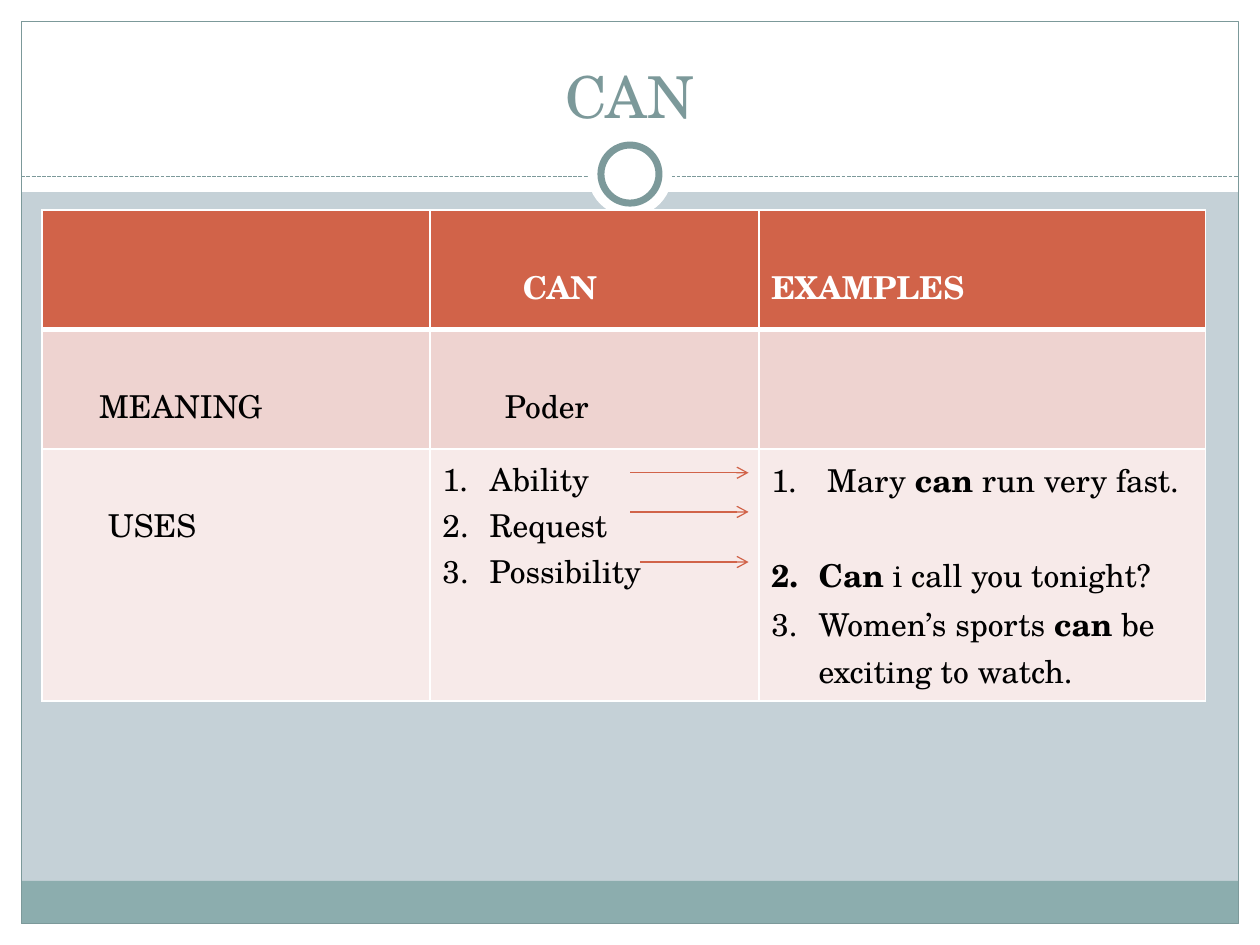
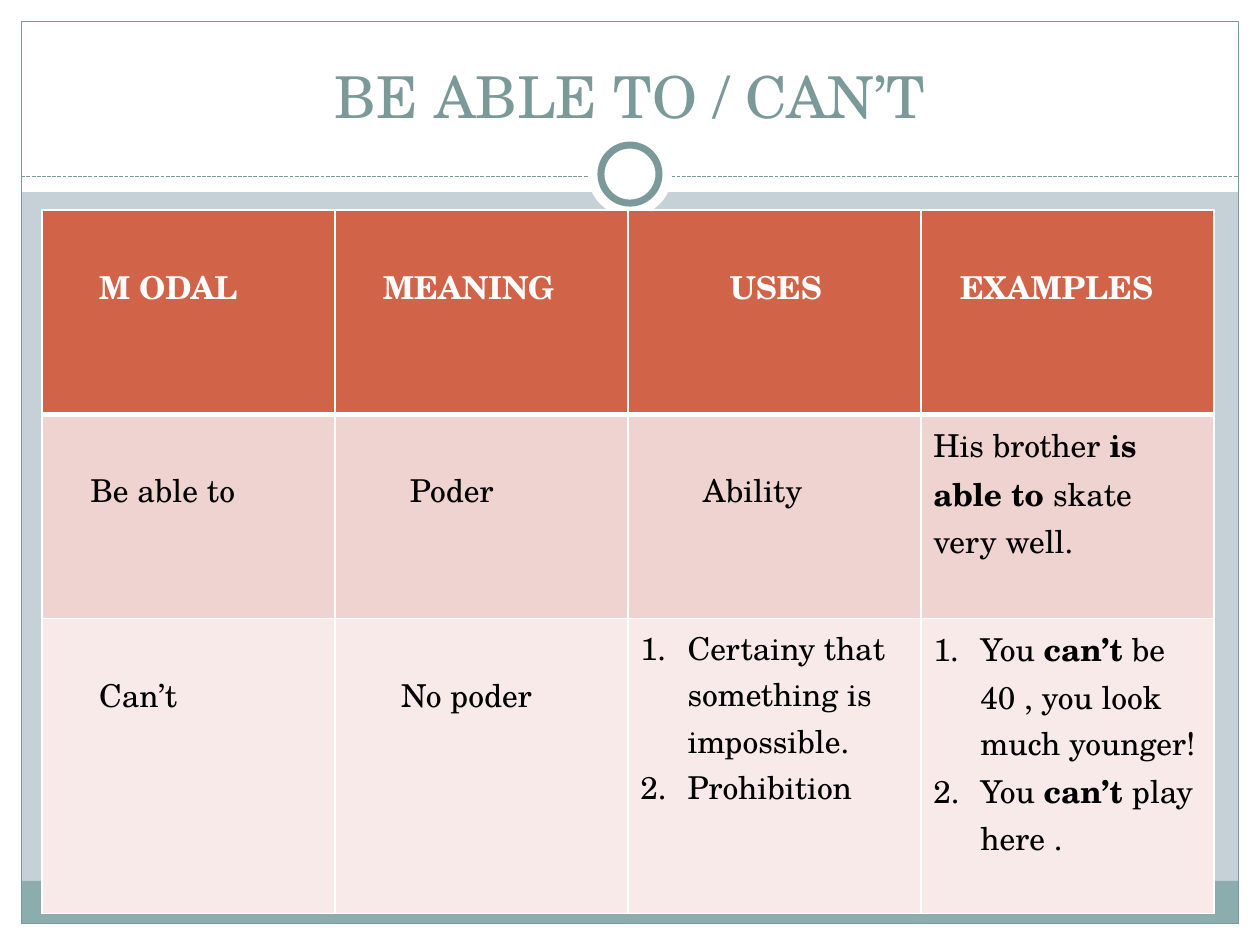
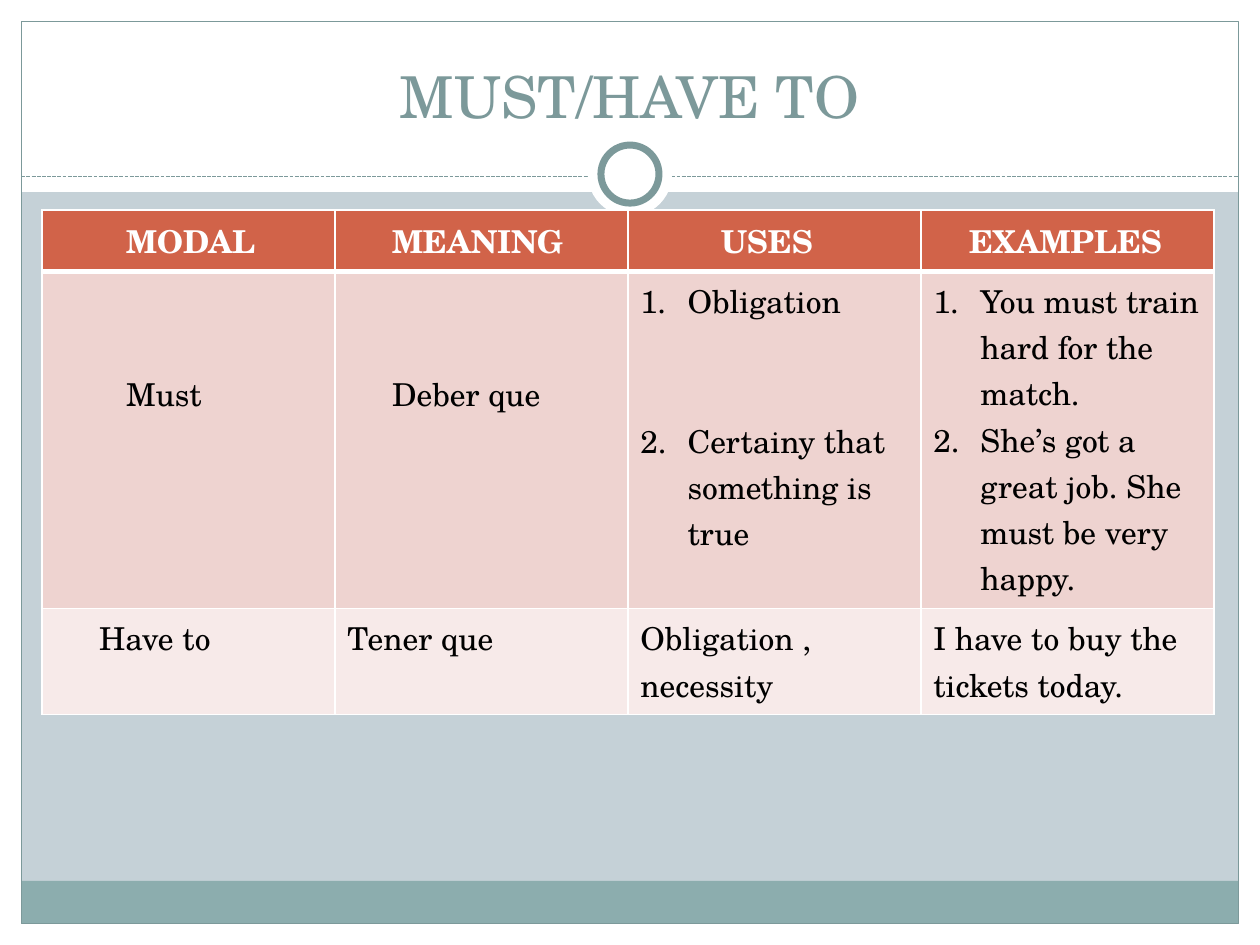
import dataclasses

import lxml.etree
import pptx
import pptx.dml.color
import pptx.enum.dml
import pptx.enum.shapes
import pptx.enum.text
import pptx.oxml
import pptx.oxml.ns
import pptx.util

Cm = pptx.util.Cm
Pt = pptx.util.Pt
SHAPE = pptx.enum.shapes.MSO_SHAPE

COLORS = {
    "background": "C5D1D7",
    "paper": "FFFFFF",
    "footer": "8CADAE",
    "accent": "7C999A",
    "header": "D16349",
    "odd_row": "EED3D0",
    "even_row": "F7EAE9",
    "text": "000000",
}
FONT = "TeX Gyre Schola"
CELL_PADDING = 0.25
INDENT_STEP = 0.18
LINE_HEIGHT = 0.94
LIST_INDENT = 0.95


@dataclasses.dataclass
class Box:
    left: float
    top: float
    width: float
    height: float

    def lengths(self):
        return [Cm(value) for value in (self.left, self.top, self.width, self.height)]


@dataclasses.dataclass
class Entry:
    paragraphs: tuple = ()
    steps: int = 0
    lines_above: int = 0
    numbered: bool = False
    lines_after_first: int = 0


PAGE = Box(0, 0, 25.4, 19.05)
TITLE = Box(0.85, 0.64, 23.7, 2.11)
WIDE_TABLE = Box(0.85, 4.23, 23.62, 0)
CAN_TABLE = Box(0.85, 4.23, 23.45, 0)


def label(text, steps=0, lines_above=0):
    return Entry((text,), steps, lines_above)


def numbered(*paragraphs, lines_after_first=0):
    return Entry(paragraphs, numbered=True, lines_after_first=lines_after_first)


def rgb(name):
    return pptx.dml.color.RGBColor.from_string(COLORS[name])


def add_element(parent, tag, **attributes):
    element = lxml.etree.SubElement(parent, pptx.oxml.ns.qn(tag))
    for name, value in attributes.items():
        element.set(name, value)
    return element


def add_plain_shape(slide, kind, box, fill=None, line_width=0):
    shape = slide.shapes.add_shape(kind, *box.lengths())
    shape.shadow.inherit = False
    if fill:
        shape.fill.solid()
        shape.fill.fore_color.rgb = rgb(fill)
    else:
        shape.fill.background()
    if line_width:
        shape.line.color.rgb = rgb("accent")
        shape.line.width = Pt(line_width)
    else:
        shape.line.fill.background()
    return shape


def add_line(slide, left, right, top, color, dashed=False, arrow=False):
    connector = slide.shapes.add_connector(
        pptx.enum.shapes.MSO_CONNECTOR.STRAIGHT, Cm(left), Cm(top), Cm(right), Cm(top)
    )
    connector.line.color.rgb = rgb(color)
    connector.line.width = Pt(0.75)
    if dashed:
        connector.line.dash_style = pptx.enum.dml.MSO_LINE.SQUARE_DOT
    if arrow:
        add_element(connector.line._get_or_add_ln(), "a:tailEnd", type="arrow")
    add_element(connector._element.spPr, "a:effectLst")
    return connector


def build_frame(slide, box):
    margin = 0.43
    right = box.left + box.width
    bottom = box.top + box.height
    inner_left = box.left + margin
    inner_width = box.width - 2 * margin
    rule_top = box.top + 3.56
    center = box.left + box.width / 2
    ring_center = box.top + 3.51

    def circle(diameter):
        return Box(center - diameter / 2, ring_center - diameter / 2, diameter, diameter)

    borders = [
        Box(box.left, bottom - margin, box.width, margin),
        Box(box.left, box.top, box.width, 3.87),
        Box(box.left, box.top, margin, box.height),
        Box(right - margin, box.top, margin, box.height),
    ]
    parts = [add_plain_shape(slide, SHAPE.RECTANGLE, border, "paper") for border in borders]
    footer = Box(inner_left, bottom - margin - 0.86, inner_width, 0.86)
    outline = Box(inner_left, box.top + margin, inner_width, box.height - 2 * margin)
    parts += [
        add_plain_shape(slide, SHAPE.RECTANGLE, footer, "footer"),
        add_plain_shape(slide, SHAPE.RECTANGLE, outline, line_width=0.75),
        add_line(slide, inner_left, right - margin, rule_top, "accent", dashed=True),
        add_plain_shape(slide, SHAPE.OVAL, circle(1.7), "paper"),
        add_plain_shape(slide, SHAPE.OVAL, circle(1.17), "paper", 4),
    ]
    return parts


def share_frame(slide, layout):
    for part in build_frame(slide, PAGE):
        layout.shapes._spTree.append(part._element)


def set_title(slide, box, text):
    title = slide.shapes.title
    title.left, title.top, title.width, title.height = box.lengths()
    frame = title.text_frame
    frame.text = text
    frame.auto_size = pptx.enum.text.MSO_AUTO_SIZE.NONE
    frame.vertical_anchor = pptx.enum.text.MSO_ANCHOR.BOTTOM
    paragraph = frame.paragraphs[0]
    paragraph.alignment = pptx.enum.text.PP_ALIGN.CENTER
    set_font(paragraph.font, 33, "accent")


def set_font(font, size, color):
    font.name = FONT
    font.size = Pt(size)
    font.color.rgb = rgb(color)


def write_paragraph(paragraph, text, is_header):
    for index, part in enumerate(text.split("*")):
        if part:
            run = paragraph.add_run()
            run.text = part
            run.font.bold = is_header or index % 2 == 1
    set_font(paragraph.font, 18, "paper" if is_header else "text")


def number_paragraph(paragraph):
    properties = paragraph._p.get_or_add_pPr()
    properties.set("marL", str(Cm(LIST_INDENT)))
    properties.set("indent", str(-Cm(LIST_INDENT)))
    numbering = pptx.oxml.parse_xml(
        f'<a:buAutoNum {pptx.oxml.ns.nsdecls("a")} type="arabicPeriod"/>'
    )
    properties.find(pptx.oxml.ns.qn("a:defRPr")).addprevious(numbering)


def set_borders(cell, row):
    properties = cell._tc.get_or_add_tcPr()
    widths = {"lnL": 1, "lnR": 1, "lnT": 3 if row == 1 else 1, "lnB": 3 if row == 0 else 1}
    for index, (side, width) in enumerate(widths.items()):
        border = add_element(properties, f"a:{side}", w=str(Pt(width)))
        fill = add_element(border, "a:solidFill")
        add_element(fill, "a:srgbClr", val=COLORS["paper"])
        properties.insert(index, border)


def fill_cell(cell, entry, row):
    cell.fill.solid()
    cell.fill.fore_color.rgb = rgb(("header", "odd_row", "even_row")[row])
    set_borders(cell, row)
    cell.margin_left = Cm(CELL_PADDING + entry.steps * INDENT_STEP)
    cell.margin_top = Cm(0.13 + entry.lines_above * LINE_HEIGHT)
    frame = cell.text_frame
    for index, text in enumerate(entry.paragraphs):
        paragraph = frame.add_paragraph() if index else frame.paragraphs[0]
        write_paragraph(paragraph, text, row == 0)
        if index == 0 and entry.lines_after_first:
            paragraph.space_after = Cm(entry.lines_after_first * LINE_HEIGHT)
        if entry.numbered:
            number_paragraph(paragraph)


def add_modal_table(slide, box, column_shares, row_heights, rows):
    table_box = dataclasses.replace(box, height=sum(row_heights))
    table = slide.shapes.add_table(len(rows), len(rows[0]), *table_box.lengths()).table
    for column, share in zip(table.columns, column_shares):
        column.width = Cm(box.width * share / sum(column_shares))
    for row, (height, entries) in enumerate(zip(row_heights, rows)):
        table.rows[row].height = Cm(height)
        for column, entry in enumerate(entries):
            fill_cell(table.cell(row, column), entry, row)


def add_use_arrows(slide, box):
    for start, top in ((11.85, 5.3), (11.85, 6.09), (12.05, 7.1)):
        add_line(slide, box.left + start, box.left + 14.24, box.top + top, "header", arrow=True)


CAN_ROWS = [
    [Entry(), label("CAN", 9, 1), label("EXAMPLES", 0, 1)],
    [label("MEANING", 5, 1), label("Poder", 7, 1), Entry()],
    [
        label("USES", 6, 1),
        numbered("Ability", "Request", "Possibility"),
        numbered(
            " Mary *can *run very fast.",
            "*Can* i call you tonight?",
            "Women’s sports *can *be exciting to watch.",
            lines_after_first=1,
        ),
    ],
]

ABLE_ROWS = [
    [label("M ODAL", 5, 1), label("MEANING", 4, 1), label("USES", 10, 1), label("EXAMPLES", 3, 1)],
    [
        label("Be able to", 4, 1),
        label("Poder", 7, 1),
        label("Ability", 7, 1),
        label("His brother *is able to *skate very well."),
    ],
    [
        label("Can’t", 5, 1),
        label("No poder", 6, 1),
        numbered("Certainy that something is impossible.", "Prohibition"),
        numbered("You *can’t *be 40 , you look much younger!", "You *can’t *play here ."),
    ],
]

MUST_ROWS = [
    [label("MODAL", 8), label("MEANING", 5), label("USES", 9), label("EXAMPLES", 4)],
    [
        label("Must", 8, 2),
        label("Deber que", 5, 2),
        numbered("Obligation", "Certainy that something is true", lines_after_first=2),
        numbered(
            "You must train hard for the match.",
            "She’s got a great job. She must be very happy.",
        ),
    ],
    [
        label("Have to", 5),
        label("Tener que"),
        label("Obligation , necessity"),
        label("I have to buy the tickets today."),
    ],
]

EQUAL_COLUMNS = (1, 1, 1, 1)
LESSONS = [
    ("CAN", CAN_TABLE, (7.82, 6.63, 9), (2.41, 2.41, 5.08), CAN_ROWS),
    ("BE ABLE TO / CAN’T", WIDE_TABLE, EQUAL_COLUMNS, (4.12, 4.12, 5.94), ABLE_ROWS),
    ("MUST/HAVE TO", WIDE_TABLE, EQUAL_COLUMNS, (1.2, 6.8, 2.13), MUST_ROWS),
]


def main():
    presentation = pptx.Presentation()
    presentation.slide_width = Cm(PAGE.width)
    presentation.slide_height = Cm(PAGE.height)
    background = presentation.slide_master.background.fill
    background.solid()
    background.fore_color.rgb = rgb("background")
    layout = presentation.slide_layouts.get_by_name("Title Only")
    slides = []
    for title, box, column_shares, row_heights, rows in LESSONS:
        slide = presentation.slides.add_slide(layout)
        set_title(slide, TITLE, title)
        add_modal_table(slide, box, column_shares, row_heights, rows)
        slides.append(slide)
    share_frame(slides[0], layout)
    add_use_arrows(slides[0], CAN_TABLE)
    presentation.save("out.pptx")


if __name__ == "__main__":
    main()
